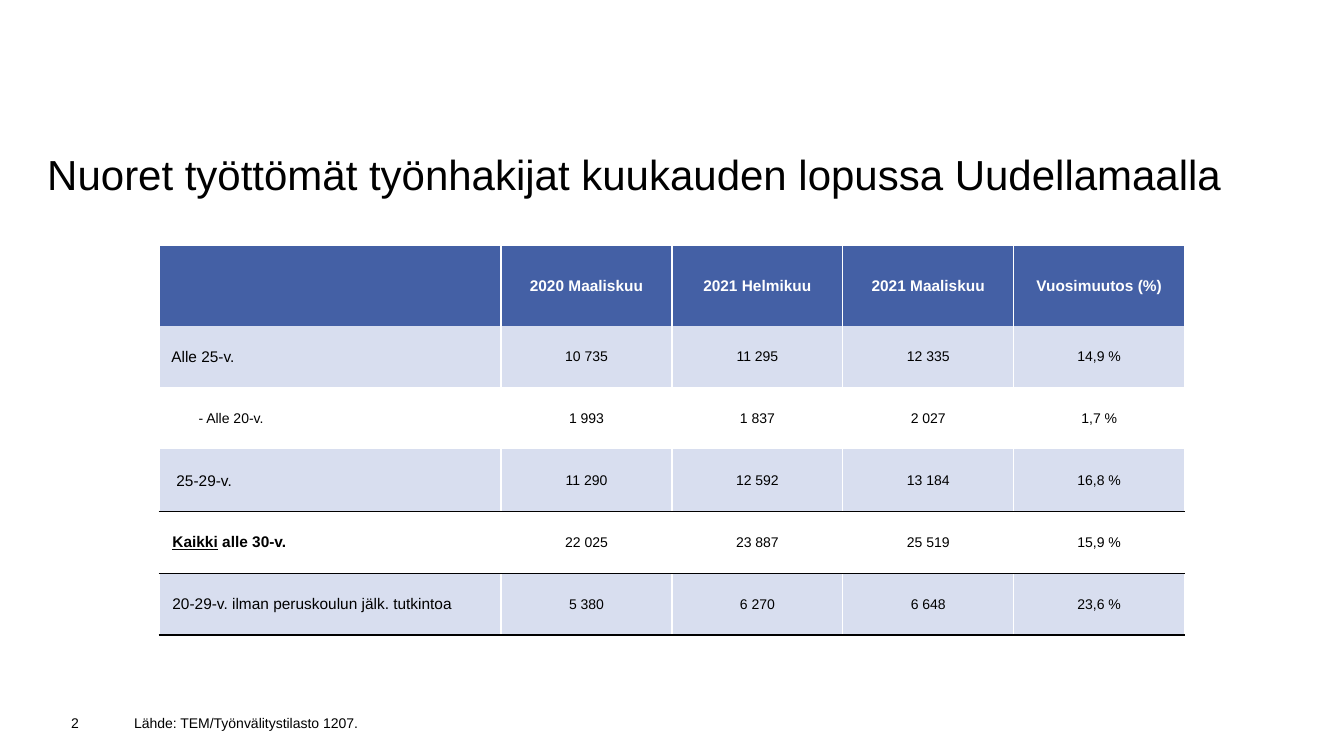
"""Build a slide with a table of young unemployed jobseekers in Uusimaa."""
from lxml.etree import SubElement
from pptx import Presentation
from pptx.dml.color import RGBColor
from pptx.enum.text import MSO_ANCHOR, PP_ALIGN
from pptx.oxml.ns import qn
from pptx.util import Inches, Pt

TITLE = "Nuoret työttömät työnhakijat kuukauden lopussa Uudellamaalla"
SOURCE = "Lähde: TEM/Työnvälitystilasto 1207."
PAGE_NUMBER = "2"
HEADINGS = ["", "2020 Maaliskuu", "2021 Helmikuu", "2021 Maaliskuu", "Vuosimuutos (%)"]
AGE_GROUPS = [
    {"label": ["Alle 25-v."], "indent": 0.12,
     "values": ["10 735", "11 295", "12 335", "14,9 %"]},
    {"label": ["- Alle 20-v."], "indent": 0.39, "size": 10,
     "values": ["1 993", "1 837", "2 027", "1,7 %"]},
    {"label": ["25-29-v."], "indent": 0.17, "rule": 0.5,
     "values": ["11 290", "12 592", "13 184", "16,8 %"]},
    {"label": ["Kaikki", " alle 30-v."], "indent": 0.13, "rule": 0.5,
     "bold": True, "underlined": "Kaikki",
     "values": ["22 025", "23 887", "25 519", "15,9 %"]},
    {"label": ["20-29-v. ilman peruskoulun jälk. tutkintoa"], "indent": 0.13, "rule": 1,
     "values": ["5 380", "6 270", "6 648", "23,6 %"]},
]
COLORS = {"text": "000000", "white": "FFFFFF", "header": "4460A5", "band": "D8DEEF"}
FONT = "Arial"
TABLE_LEFT, TABLE_TOP, TABLE_WIDTH, TABLE_HEIGHT = 1.58, 2.44, 10.17, 3.86
LABEL_WIDTH, HEADER_HEIGHT = 3.39, 0.79


def write_text(frame, parts, size=10, color="text", bold=False, underlined=None,
               align=PP_ALIGN.LEFT):
    paragraph = frame.paragraphs[0]
    paragraph.alignment = align
    for part in parts:
        run = paragraph.add_run()
        run.text = part
        run.font.name = FONT
        run.font.size = Pt(size)
        run.font.bold = bold
        run.font.underline = part == underlined
        run.font.color.rgb = RGBColor.from_string(COLORS[color])


def add_text_box(slide, place, text, anchor=MSO_ANCHOR.MIDDLE, left_inset=0.1,
                 top_inset=0.05, **text_format):
    frame = slide.shapes.add_textbox(*map(Inches, place)).text_frame
    frame.word_wrap = True
    frame.vertical_anchor = anchor
    frame.margin_left = Inches(left_inset)
    frame.margin_top = Inches(top_inset)
    write_text(frame, [text], **text_format)


def add_border(cell, edge, width, color):
    line = SubElement(cell._tc.get_or_add_tcPr(), qn(f"a:ln{edge}"), w=str(Pt(width)))
    if width:
        fill = SubElement(line, qn("a:solidFill"))
        SubElement(fill, qn("a:srgbClr"), val=COLORS[color])
    else:
        SubElement(line, qn("a:noFill"))


def fill_cell(cell, parts, fill=None, indent=0.01, rule_above=0, rule_below=0,
              **text_format):
    cell.vertical_anchor = MSO_ANCHOR.MIDDLE
    cell.margin_left = Inches(indent)
    cell.margin_right = cell.margin_top = Inches(0.01)
    cell.margin_bottom = 0
    for edge, width, color in (("L", 1, "white"), ("R", 1, "white"),
                               ("T", rule_above, "text"), ("B", rule_below, "text")):
        add_border(cell, edge, width, color)
    if fill:
        cell.fill.solid()
        cell.fill.fore_color.rgb = RGBColor.from_string(COLORS[fill])
    else:
        cell.fill.background()
    write_text(cell.text_frame, parts, **text_format)


def add_jobseeker_table(slide):
    table = slide.shapes.add_table(
        len(AGE_GROUPS) + 1, len(HEADINGS), Inches(TABLE_LEFT), Inches(TABLE_TOP),
        Inches(TABLE_WIDTH), Inches(TABLE_HEIGHT)).table
    value_width = (TABLE_WIDTH - LABEL_WIDTH) / (len(HEADINGS) - 1)
    group_height = (TABLE_HEIGHT - HEADER_HEIGHT) / len(AGE_GROUPS)
    for index, column in enumerate(table.columns):
        column.width = Inches(value_width if index else LABEL_WIDTH)
    for index, row in enumerate(table.rows):
        row.height = Inches(group_height if index else HEADER_HEIGHT)

    for column, heading in enumerate(HEADINGS):
        fill_cell(table.cell(0, column), [heading] if heading else [], fill="header",
                  size=11, color="white", bold=True, align=PP_ALIGN.CENTER)

    rule_above = 0
    for row, group in enumerate(AGE_GROUPS, 1):
        rule_below = group.get("rule", 0)
        row_format = {"fill": "band" if row % 2 else None,
                      "rule_above": rule_above, "rule_below": rule_below}
        fill_cell(table.cell(row, 0), group["label"], indent=group["indent"],
                  size=group.get("size", 11), bold=group.get("bold", False),
                  underlined=group.get("underlined"), **row_format)
        for column, value in enumerate(group["values"], 1):
            fill_cell(table.cell(row, column), [value], align=PP_ALIGN.CENTER,
                      **row_format)
        rule_above = rule_below


def main():
    deck = Presentation()
    deck.slide_width, deck.slide_height = Inches(13.33), Inches(7.5)
    slide = deck.slides.add_slide(deck.slide_layouts[6])
    add_text_box(slide, (0.37, 1.39, 12.18, 1.25), TITLE, anchor=MSO_ANCHOR.TOP,
                 top_inset=0.08, size=30)
    add_text_box(slide, (1.19, 6.97, 9.66, 0.4), SOURCE, left_inset=0.14)
    add_text_box(slide, (0.3, 6.98, 0.58, 0.39), PAGE_NUMBER, align=PP_ALIGN.RIGHT)
    add_jobseeker_table(slide)
    deck.save("out.pptx")


if __name__ == "__main__":
    main()
